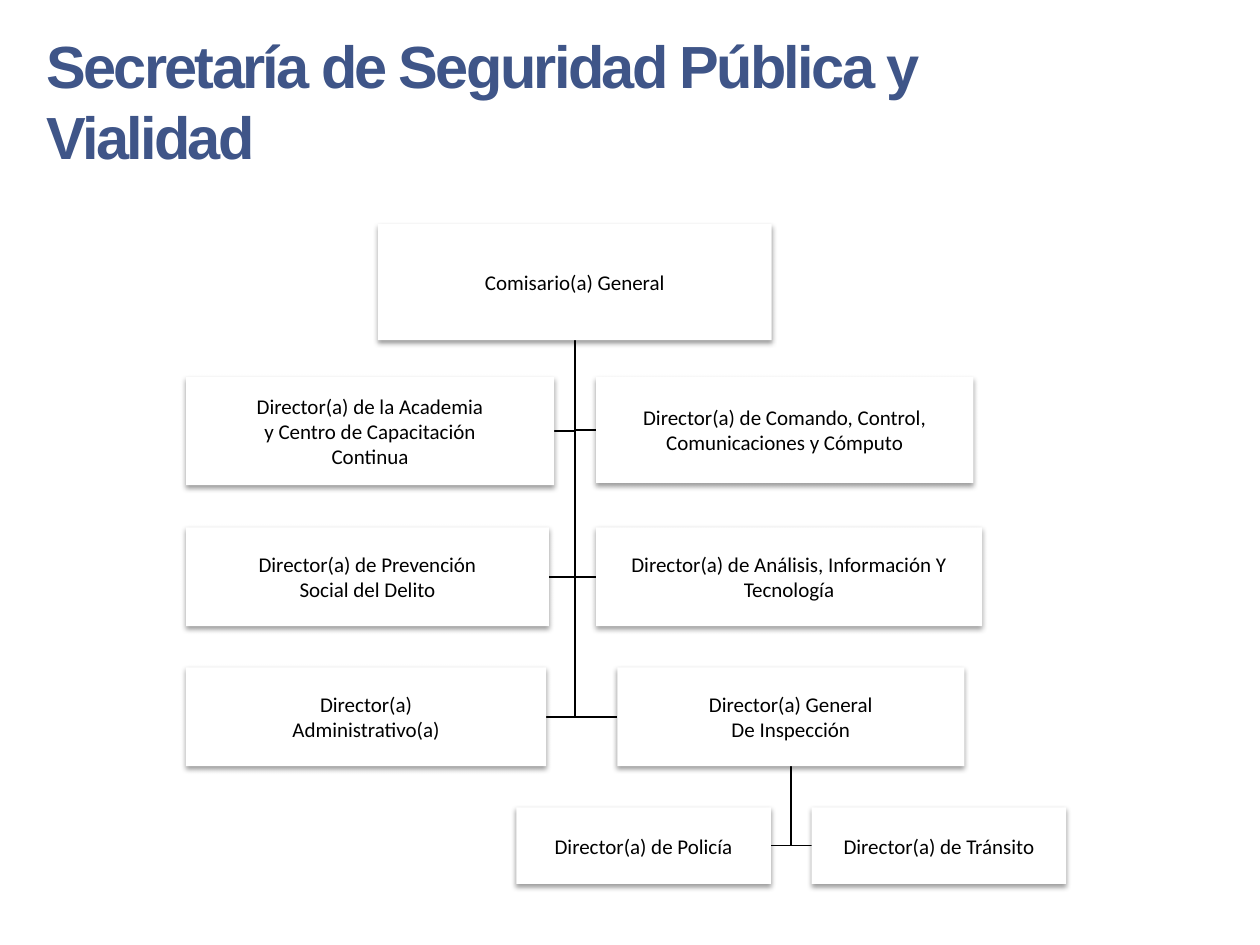
from dataclasses import dataclass

from lxml.etree import SubElement
from pptx import Presentation
from pptx.dml.color import RGBColor
from pptx.enum.shapes import MSO_SHAPE
from pptx.enum.text import MSO_ANCHOR, MSO_AUTO_SIZE, PP_ALIGN
from pptx.oxml.ns import qn
from pptx.slide import Slide
from pptx.util import Pt


@dataclass
class Post:
    left: float
    top: float
    width: float
    height: float
    lines: tuple[str, ...]

    @property
    def mid(self) -> float:
        return self.left + self.width / 2


def tint(code: str) -> RGBColor:
    return RGBColor.from_string(code)


def add_run(para, text: str, font: str, size: float, code: str):
    run = para.add_run()
    run.text = text
    run.font.name = font
    run.font.size = Pt(size)
    run.font.color.rgb = tint(code)
    return run


def add_shade(shape) -> None:
    """Give the shape a soft shadow straight below it."""
    shape.shadow.inherit = False
    effects = shape._element.spPr.find(qn("a:effectLst"))
    shade = SubElement(effects, qn("a:outerShdw"), blurRad=str(Pt(3.1)),
                       dist=str(Pt(1.6)), dir="5400000", rotWithShape="0")
    black = SubElement(shade, qn("a:srgbClr"), val="000000")
    SubElement(black, qn("a:alpha"), val="38000")


def add_title(slide: Slide, text: str) -> None:
    box = slide.shapes.add_textbox(Pt(19.4), Pt(13), Pt(537), Pt(92.2))
    frame = box.text_frame
    frame.word_wrap = True
    frame.auto_size = MSO_AUTO_SIZE.SHAPE_TO_FIT_TEXT
    run = add_run(frame.paragraphs[0], text, "Arial", 34, "3F5588")
    run.font.bold = True
    run.font._element.set("spc", "-150")


def add_link(slide: Slide, boss: Post, post: Post) -> None:
    """Run down from the boss, then sideways to the near edge of the post."""
    side = post.left if post.left > boss.mid else post.left + post.width
    level = post.top + post.height / 2
    path = slide.shapes.build_freeform(Pt(boss.mid), Pt(boss.top + boss.height))
    path.add_line_segments([(Pt(boss.mid), Pt(level)), (Pt(side), Pt(level))],
                           close=False)
    link = path.convert_to_shape()
    link.shadow.inherit = False
    link.fill.background()
    link.line.color.rgb = tint("000000")
    link.line.width = Pt(1)


def add_post(slide: Slide, post: Post) -> None:
    box = slide.shapes.add_shape(MSO_SHAPE.RECTANGLE, Pt(post.left), Pt(post.top),
                                 Pt(post.width), Pt(post.height))
    box.fill.solid()
    box.fill.fore_color.rgb = tint("FFFFFF")
    box.line.fill.background()
    add_shade(box)
    frame = box.text_frame
    frame.word_wrap = True
    frame.vertical_anchor = MSO_ANCHOR.MIDDLE
    frame.margin_left = frame.margin_right = Pt(0.6)
    frame.margin_top = frame.margin_bottom = Pt(0.6)
    for i, line in enumerate(post.lines):
        para = frame.add_paragraph() if i else frame.paragraphs[0]
        para.alignment = PP_ALIGN.CENTER
        add_run(para, line, "Calibri", 12, "000000")


# Posts of the chart
LEFT, RIGHT = 106.3, 340.6
CHIEF = Post(216, 128, 225, 66.3, ("Comisario(a) General",))
HEAD = Post(352.8, 381.4, 198.3, 56.4, ("Director(a) General", "De Inspección"))
STAFF = [
    Post(LEFT, 215.4, 210.3, 61.8,
         ("Director(a) de la Academia", "y Centro de Capacitación", "Continua")),
    Post(RIGHT, 215.4, 215.6, 60.6,
         ("Director(a) de Comando, Control,", "Comunicaciones y Cómputo")),
    Post(LEFT, 301.4, 207.4, 56.4,
         ("Director(a) de Prevención", "Social del Delito")),
    Post(RIGHT, 301.4, 220.6, 56.4,
         ("Director(a) de Análisis, Información Y Tecnología",)),
    Post(LEFT, 381.4, 205.8, 56.4, ("Director(a)", "Administrativo(a)")),
    HEAD,
]
UNITS = [
    Post(295, 461.3, 145.5, 43.8, ("Director(a) de Policía",)),
    Post(463.8, 461.3, 145.5, 43.8, ("Director(a) de Tránsito",)),
]


def main() -> None:
    deck = Presentation()
    deck.slide_width, deck.slide_height = Pt(720), Pt(540)
    slide = deck.slides.add_slide(deck.slide_layouts[6])
    add_title(slide, "Secretaría de Seguridad Pública y Vialidad")
    # Links lie behind the boxes
    for boss, team in ((HEAD, UNITS), (CHIEF, STAFF)):
        for post in team:
            add_link(slide, boss, post)
    # Boxes
    for post in [CHIEF, *STAFF, *UNITS]:
        add_post(slide, post)
    deck.save("out.pptx")


if __name__ == "__main__":
    main()
